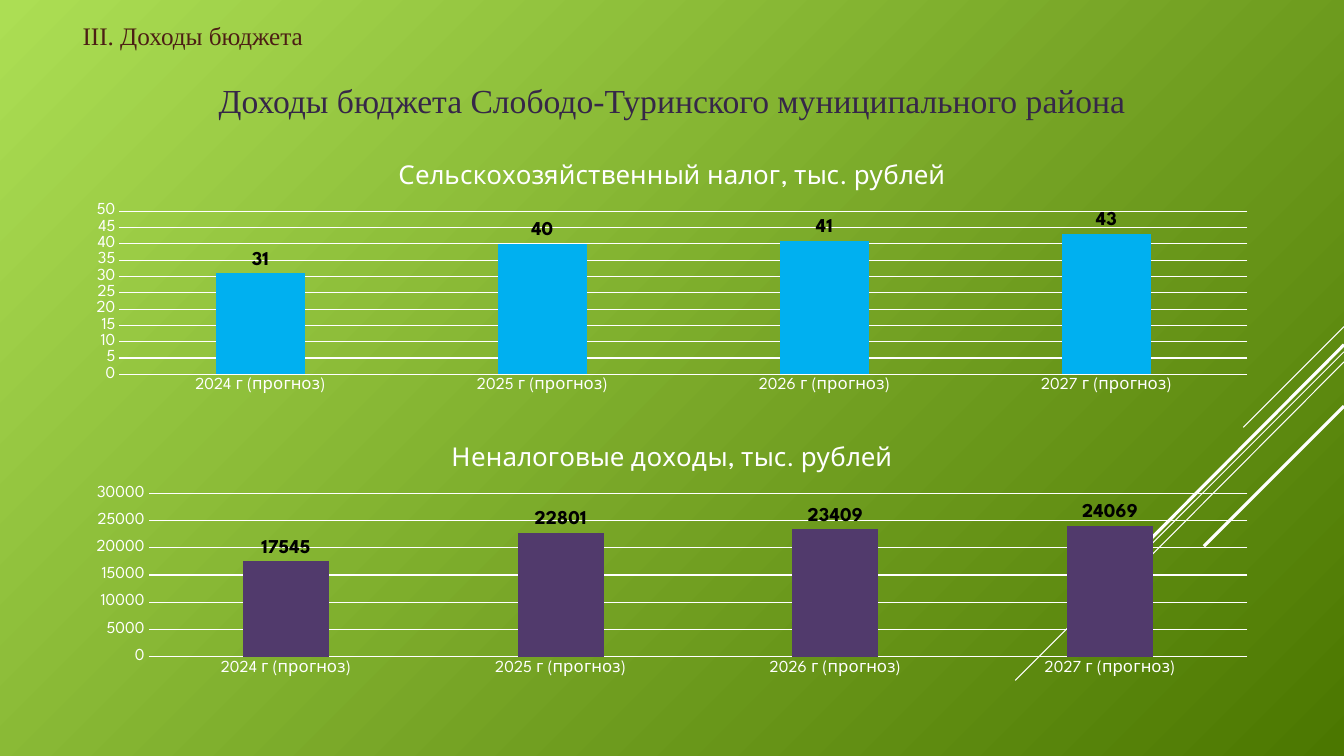
from dataclasses import dataclass

from pptx import Presentation
from pptx.chart.data import CategoryChartData
from pptx.dml.color import RGBColor
from pptx.enum.chart import XL_CHART_TYPE, XL_LABEL_POSITION, XL_TICK_MARK
from pptx.enum.shapes import MSO_CONNECTOR
from pptx.enum.text import MSO_ANCHOR, PP_ALIGN
from pptx.oxml import parse_xml
from pptx.oxml.ns import nsdecls, qn
from pptx.slide import Slide
from pptx.util import Inches, Pt

COLUMN = XL_CHART_TYPE.COLUMN_CLUSTERED
OUTSIDE = XL_LABEL_POSITION.OUTSIDE_END
NO_TICK = XL_TICK_MARK.NONE
STRAIGHT = MSO_CONNECTOR.STRAIGHT
LEFT, CENTER = PP_ALIGN.LEFT, PP_ALIGN.CENTER
TOP, MIDDLE = MSO_ANCHOR.TOP, MSO_ANCHOR.MIDDLE

SANS, SERIF = "League Spartan", "Times New Roman"
WHITE, BLACK = "FFFFFF", "000000"
EDGE, WIDTH, HEIGHT = 0.72, 11.89, 2.5
RIGHT = 13.33
YEARS = [f"{year} г (прогноз)" for year in range(2024, 2028)]


@dataclass
class Ray:
    top: float
    left: float
    base: float
    weight: float


@dataclass
class Graph:
    top: float
    title: str
    values: list[int]
    color: str
    limit: int
    step: int


@dataclass
class Label:
    top: float
    height: float
    text: str
    size: float
    color: str
    align: PP_ALIGN
    anchor: MSO_ANCHOR


RAYS = [
    Ray(3.24, 12.33, 4.24, 0.75),
    Ray(3.49, 10.07, 6.75, 0.75),
    Ray(3.59, 11.26, 5.67, 0.75),
    Ray(3.42, 11.42, 5.34, 2.25),
    Ray(4.03, 11.94, 5.42, 2.25),
]
GRAPHS = [
    Graph(1.46, "Сельскохозяйственный налог, тыс. рублей",
          [31, 40, 41, 43], "00B0F0", 50, 5),
    Graph(4.26, "Неналоговые доходы, тыс. рублей",
          [17545, 22801, 23409, 24069], "513A6C", 30000, 5000),
]
LABELS = [
    Label(0.19, 0.32, "III. Доходы бюджета", 18, "4C1E14", LEFT, MIDDLE),
    Label(0.74, 0.5, "Доходы бюджета Слободо-Туринского муниципального района",
          24, "362748", CENTER, TOP),
]


def rgb(code: str) -> RGBColor:
    return RGBColor.from_string(code)


def style(font, size: float, color: str, face: str, bold: bool = False) -> None:
    font.size = Pt(size)
    font.name = face
    font.bold = bold
    font.color.rgb = rgb(color)


def stroke(line, weight: float) -> None:
    line.color.rgb = rgb(WHITE)
    line.width = Pt(weight)


def paint(slide: Slide) -> None:
    fill = slide.background.fill
    fill.gradient()
    fill.gradient_angle = 315
    for stop, code in zip(fill.gradient_stops, ("ACDE54", "4B7700")):
        stop.color.rgb = rgb(code)


def add_ray(slide: Slide, ray: Ray) -> None:
    line = slide.shapes.add_connector(
        STRAIGHT, Inches(RIGHT), Inches(ray.top), Inches(ray.left), Inches(ray.base))
    stroke(line.line, ray.weight)
    line.element.find(qn("p:spPr")).append(
        parse_xml(f"<a:effectLst {nsdecls('a')}/>"))


def add_graph(slide: Slide, graph: Graph) -> None:
    data = CategoryChartData()
    data.categories = YEARS
    data.add_series(graph.title, graph.values)
    chart = slide.shapes.add_chart(
        COLUMN, Inches(EDGE), Inches(graph.top), Inches(WIDTH), Inches(HEIGHT), data).chart
    style(chart.font, 10, BLACK, SANS)
    chart.has_legend = False

    # Clear chart area lets the gradient show
    chart.element.find(qn("c:chart")).addnext(parse_xml(
        f"<c:spPr {nsdecls('c', 'a')}><a:noFill/><a:ln><a:noFill/></a:ln></c:spPr>"))

    # Title
    run = chart.chart_title.text_frame.paragraphs[0].add_run()
    run.text = graph.title
    style(run.font, 18.5, WHITE, SANS)
    chart.chart_title.include_in_layout = False

    # Axes
    cat, val = chart.category_axis, chart.value_axis
    for axis in (cat, val):
        axis.major_tick_mark = axis.minor_tick_mark = NO_TICK
        style(axis.tick_labels.font, 12, WHITE, SANS)
    stroke(cat.format.line, 0.75)
    val.format.line.fill.background()
    stroke(val.major_gridlines.format.line, 0.75)
    val.minimum_scale, val.maximum_scale = 0, graph.limit
    val.major_unit = graph.step

    # Columns and their values
    plot = chart.plots[0]
    plot.gap_width, plot.overlap = 219, -27
    plot.vary_by_categories = False
    bars = plot.series[0]
    bars.format.fill.solid()
    bars.format.fill.fore_color.rgb = rgb(graph.color)
    marks = bars.data_labels
    marks.show_value = True
    marks.position = OUTSIDE
    style(marks.font, 14, BLACK, SANS, True)


def add_label(slide: Slide, label: Label) -> None:
    frame = slide.shapes.add_textbox(
        Inches(EDGE), Inches(label.top), Inches(WIDTH), Inches(label.height)).text_frame
    frame.word_wrap = True
    frame.vertical_anchor = label.anchor
    para = frame.paragraphs[0]
    para.alignment = label.align
    run = para.add_run()
    run.text = label.text
    style(run.font, label.size, label.color, SERIF)


def main() -> None:
    deck = Presentation()
    deck.slide_width, deck.slide_height = Inches(RIGHT), Inches(7.5)
    slide = deck.slides.add_slide(deck.slide_layouts[6])
    paint(slide)
    for ray in RAYS:
        add_ray(slide, ray)
    for graph in GRAPHS:
        add_graph(slide, graph)
    for label in LABELS:
        add_label(slide, label)
    deck.save("out.pptx")


if __name__ == "__main__":
    main()
